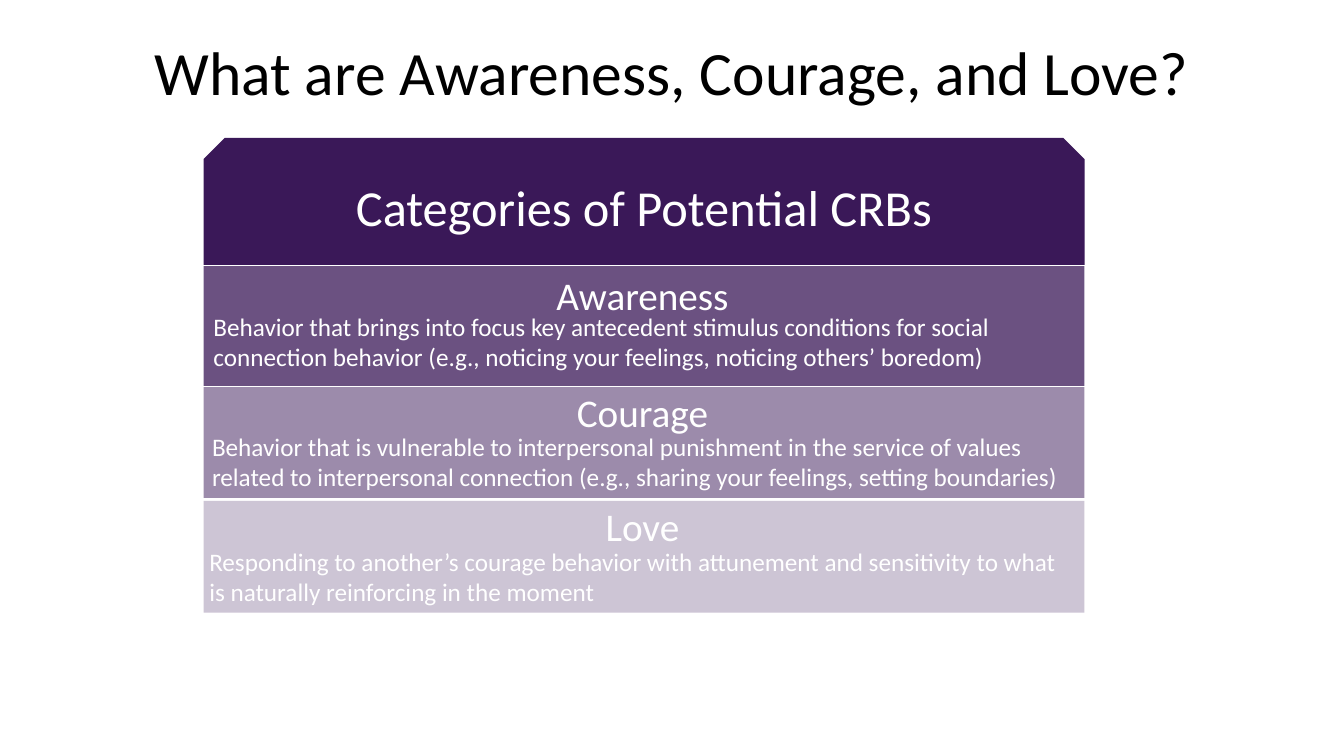
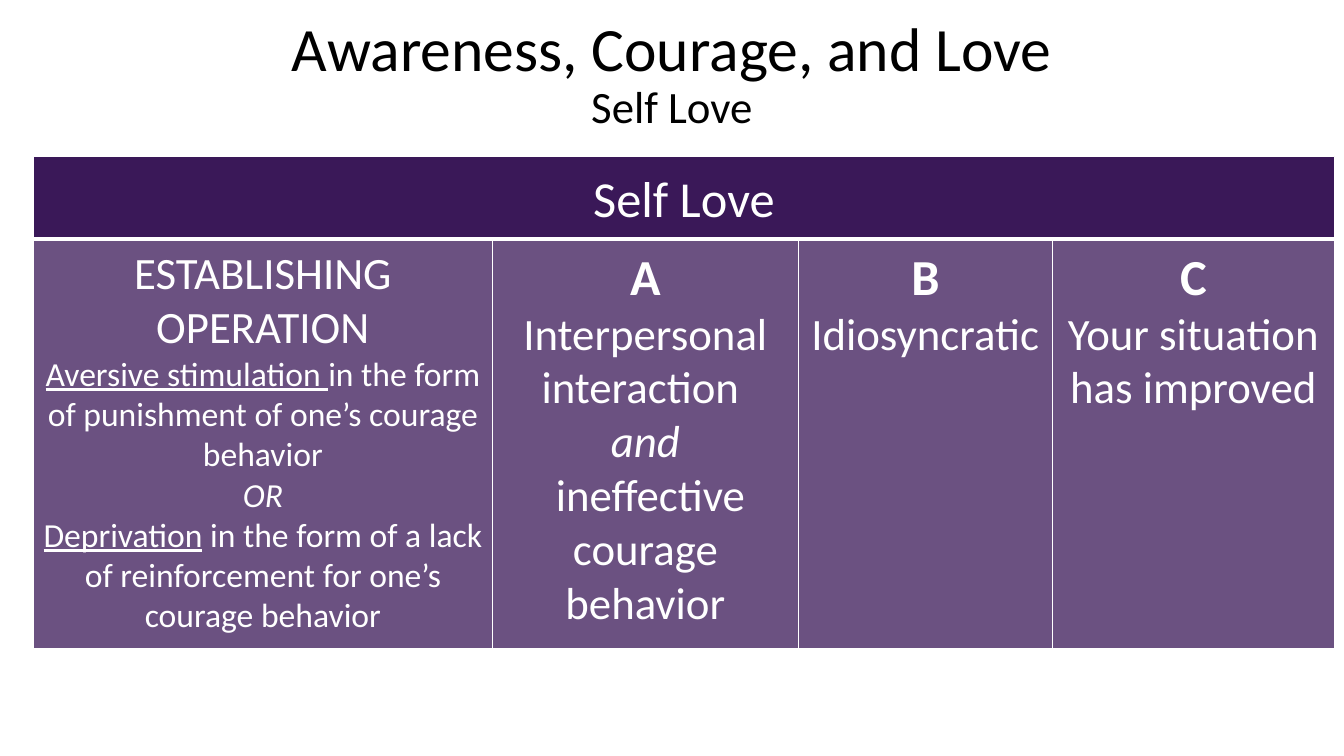
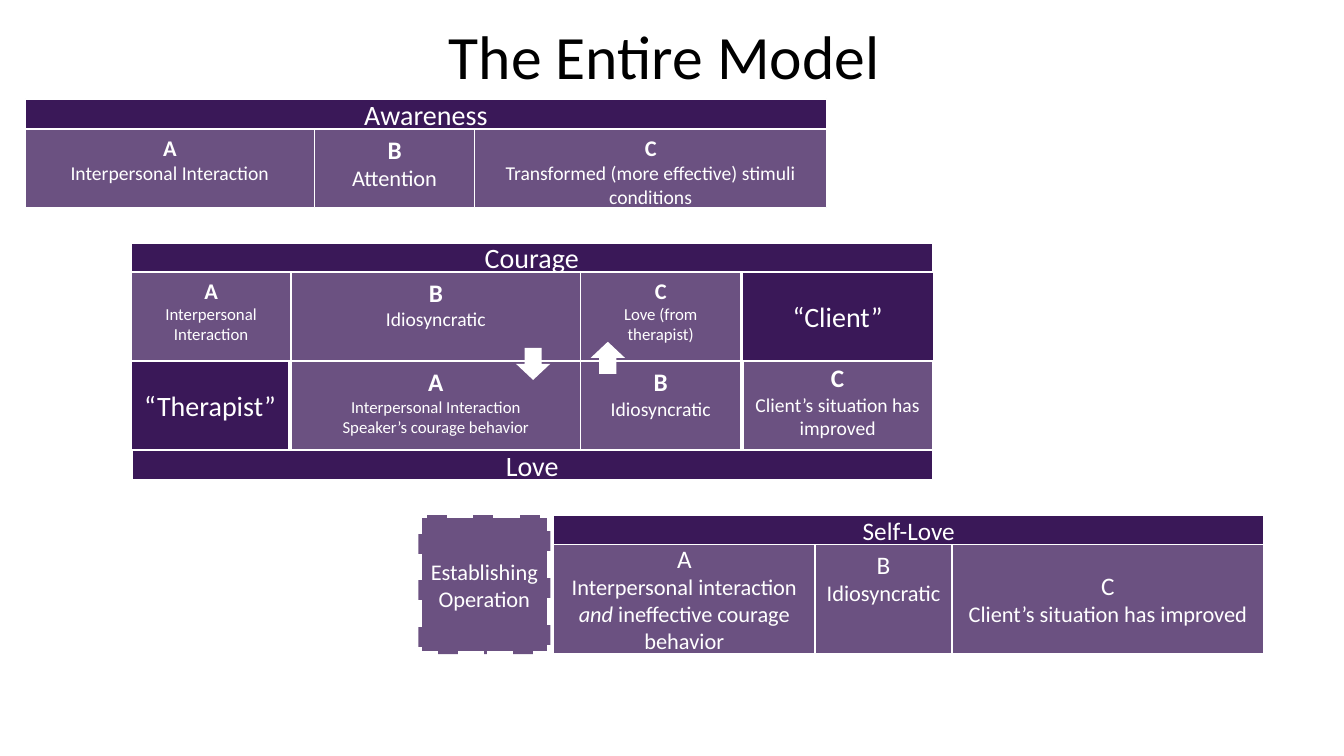
import pptx
import pptx.util
import pptx.dml.color
import pptx.enum.dml
import pptx.enum.shapes
import pptx.enum.text
import pptx.oxml.ns
import lxml.etree

Pt = pptx.util.Pt
qn = pptx.oxml.ns.qn
SHAPE = pptx.enum.shapes.MSO_SHAPE
ANCHOR = pptx.enum.text.MSO_ANCHOR
ALIGN = pptx.enum.text.PP_ALIGN

PURPLE = pptx.dml.color.RGBColor(0x3A, 0x18, 0x58)
WHITE = pptx.dml.color.RGBColor(0xFF, 0xFF, 0xFF)
BLACK = pptx.dml.color.RGBColor(0x00, 0x00, 0x00)
FONT = "Calibri"
CELL_OPACITY = 75


def run(text, size, **style):
    """One piece of text with its format values."""
    return text, dict(size=Pt(size), **style)


def line(text, size, **style):
    """A paragraph made of a single run."""
    return [run(text, size, **style)]


def term(letter, letter_size, text, size, bold=True):
    """A letter of the A-B-C sequence above its explanation."""
    return [line(letter, letter_size, bold=bold), line(text, size)]


class Deck:
    def __init__(self):
        self.prs = pptx.Presentation()
        self.prs.slide_width, self.prs.slide_height = Pt(960), Pt(540)
        self.slide = None

    def fill_text(self, frame, paragraphs, color=WHITE, anchor=ANCHOR.MIDDLE,
                  align=ALIGN.CENTER, spacing=None):
        settings = dict(word_wrap=True, vertical_anchor=anchor,
                        auto_size=pptx.enum.text.MSO_AUTO_SIZE.NONE)
        for name, value in settings.items():
            setattr(frame, name, value)
        for index, pieces in enumerate(paragraphs):
            paragraph = frame.add_paragraph() if index else frame.paragraphs[0]
            paragraph.alignment = align
            paragraph.line_spacing = spacing
            for text, style in pieces:
                if text == "\n":
                    paragraph.add_line_break()
                    continue
                piece = paragraph.add_run()
                piece.text = text
                piece.font.color.rgb = color
                for name, value in dict(name=FONT, **style).items():
                    setattr(piece.font, name, value)

    def new_slide(self, *pieces, left=66, top=2):
        self.slide = self.prs.slides.add_slide(self.prs.slide_layouts[5])
        title = self.slide.shapes.title
        place = dict(left=left, top=top, width=828, height=104.4)
        for name, value in place.items():
            setattr(title, name, Pt(value))
        self.fill_text(title.text_frame, [pieces], BLACK, spacing=0.9)

    def shape(self, place, kind=SHAPE.RECTANGLE, fill=PURPLE, opacity=100,
              border=None, dash=None, rotation=0):
        shape = self.slide.shapes.add_shape(kind, *map(Pt, place))
        shape.shadow.inherit = False
        shape.rotation = rotation
        shape.fill.solid()
        shape.fill.fore_color.rgb = fill
        if opacity < 100:
            color = shape._element.spPr.find(qn("a:solidFill"))[0]
            lxml.etree.SubElement(color, qn("a:alpha")).set("val", str(opacity * 1000))
        if border:
            shape.line.color.rgb = WHITE
            shape.line.width = Pt(border)
            shape.line.dash_style = dash
        else:
            shape.line.fill.background()
        return shape

    def band(self, place, text, size):
        self.fill_text(self.shape(place, border=1).text_frame, [line(text, size)])

    def cell(self, place, paragraphs, anchor=ANCHOR.TOP, border=1, dash=None):
        box = self.shape(place, opacity=CELL_OPACITY, border=border, dash=dash)
        self.fill_text(box.text_frame, paragraphs, anchor=anchor)

    def row(self, left, top, height, cells):
        """Adjoining cells, each given as width, paragraphs and optional anchor."""
        for width, paragraphs, *anchor in cells:
            self.cell((left, top, width, height), paragraphs, *anchor)
            left += width

    def label(self, place, text, size, align):
        box = self.slide.shapes.add_textbox(*map(Pt, place))
        self.fill_text(box.text_frame, [line(text, size)], anchor=ANCHOR.TOP, align=align)


def categories(deck):
    deck.new_slide(run("What are Awareness, Courage, and Love?", 44))
    left, width = 145.4, 629.3
    header = deck.shape((left, 98.6, width, 90.7), SHAPE.SNIP_2_SAME_RECTANGLE)
    deck.fill_text(header.text_frame, [line("Categories of Potential CRBs", 36)])

    # name, opacity, band top and height, name top, description left and top
    bands = [
        ("Awareness", 75, 190, 85.7, 190, 145.4, 218.9,
         "Behavior that brings into focus key antecedent stimulus conditions for social "
         "connection behavior (e.g., noticing your feelings, noticing others’ boredom)"),
        ("Courage", 50, 276.5, 79.2, 273.6, 144.4, 304.6,
         "Behavior that is vulnerable to interpersonal punishment in the service of values "
         "related to interpersonal connection (e.g., sharing your feelings, setting boundaries)"),
        ("Love", 25, 357.8, 79.9, 355, 142.4, 386.6,
         "Responding to another’s courage behavior with attunement and sensitivity to what "
         "is naturally reinforcing in the moment"),
    ]
    for name, opacity, top, height, name_top, text_left, text_top, text in bands:
        deck.shape((left, top, width, height), opacity=opacity)
        deck.label((left, name_top, 627, 41), name, 28, ALIGN.CENTER)
        deck.label((text_left, text_top, 628, 51), text, 18, ALIGN.LEFT)


def self_love(deck):
    deck.new_slide(run("Awareness, Courage, and Love", 44), run("\n", 44),
                   run("Self Love", 32))
    left = 23.8
    deck.band((left, 111.6, 929.5, 58.3), "Self Love", 36)
    operation = [
        [run("ESTABLISHING OPERATION", 32), run("\n", 32),
         run("Aversive stimulation ", 24, underline=True),
         run("in the form of punishment of one’s courage behavior", 24)],
        line("OR", 24, italic=True),
        [run("Deprivation", 24, underline=True),
         run(" in the form of a lack of reinforcement for one’s courage behavior", 24)],
    ]
    antecedent = term("A", 36, "Interpersonal interaction ", 32) + [
        line("and", 32, italic=True), line(" ineffective courage behavior", 32)]
    deck.row(left, 171.4, 292.3, [
        (328, operation),
        (218.5, antecedent),
        (181.4, term("B", 36, "Idiosyncratic", 32)),
        (201.6, term("C", 36, "Your situation has improved", 32)),
    ])


def entire_model(deck):
    deck.new_slide(run("The Entire Model", 44), left=60.5, top=-9.4)

    # Self-love
    deck.band((395.3, 367.9, 507.6, 21.6), "Self-Love", 18)
    antecedent = [line("A", 18), [run("Interpersonal interaction ", 16),
                                  run("and", 16, italic=True),
                                  run(" ineffective courage behavior", 16)]]
    deck.row(395.3, 388.8, 77.8, [
        (187, antecedent, ANCHOR.MIDDLE),
        (97.6, term("B", 18, "Idiosyncratic", 16, bold=False)),
        (223, term("C", 18, "Client’s situation has improved", 16, bold=False),
         ANCHOR.MIDDLE),
    ])
    deck.cell((298.8, 367.9, 94.3, 99.4), [line("Establishing Operation", 16)],
              ANCHOR.MIDDLE, 4.75, pptx.enum.dml.MSO_LINE.DASH)

    # Awareness
    deck.band((18, 70.6, 572.4, 21.6), "Awareness", 20)
    deck.row(18, 92.2, 56.2, [
        (206.6, term("A", 16, "Interpersonal Interaction", 14)),
        (114.5, term("B", 18, "Attention", 16)),
        (251.3, term("C", 16, "Transformed (more effective) stimuli conditions", 14)),
    ])

    # Courage (client) above love (therapist)
    deck.band((93.6, 173.5, 572.4, 20.9), "Courage", 20)
    deck.band((94.3, 321.8, 571.7, 20.9), "Love", 20)
    deck.row(93.6, 194.4, 63.4, [
        (114.4, term("A", 16, "Interpersonal Interaction", 12)),
        (206.7, term("B", 18, "Idiosyncratic", 14)),
        (114.5, term("C", 16, "Love (from therapist)", 12)),
    ])
    deck.row(208, 258, 63.4, [
        (206.7, term("A", 18, "Interpersonal Interaction", 12)
         + [line("Speaker’s courage behavior", 12)]),
        (114.5, term("B", 18, "Idiosyncratic", 14)),
    ])
    deck.cell((530.6, 252, 135.4, 69.1),
              term("C", 18, "Client’s situation has improved", 14), ANCHOR.MIDDLE)
    for left, top, rotation in ((368.6, 248.4, 0), (421.9, 244.1, 180)):
        deck.shape((left, top, 24.5, 23), SHAPE.DOWN_ARROW, WHITE, rotation=rotation)
    deck.band((93.6, 257.8, 113, 63.4), "“Therapist”", 20)
    deck.band((529.9, 194.4, 136.8, 63.4), "“Client”", 20)


def main():
    deck = Deck()
    for build in (categories, self_love, entire_model):
        build(deck)
    deck.prs.save("out.pptx")


if __name__ == "__main__":
    main()
